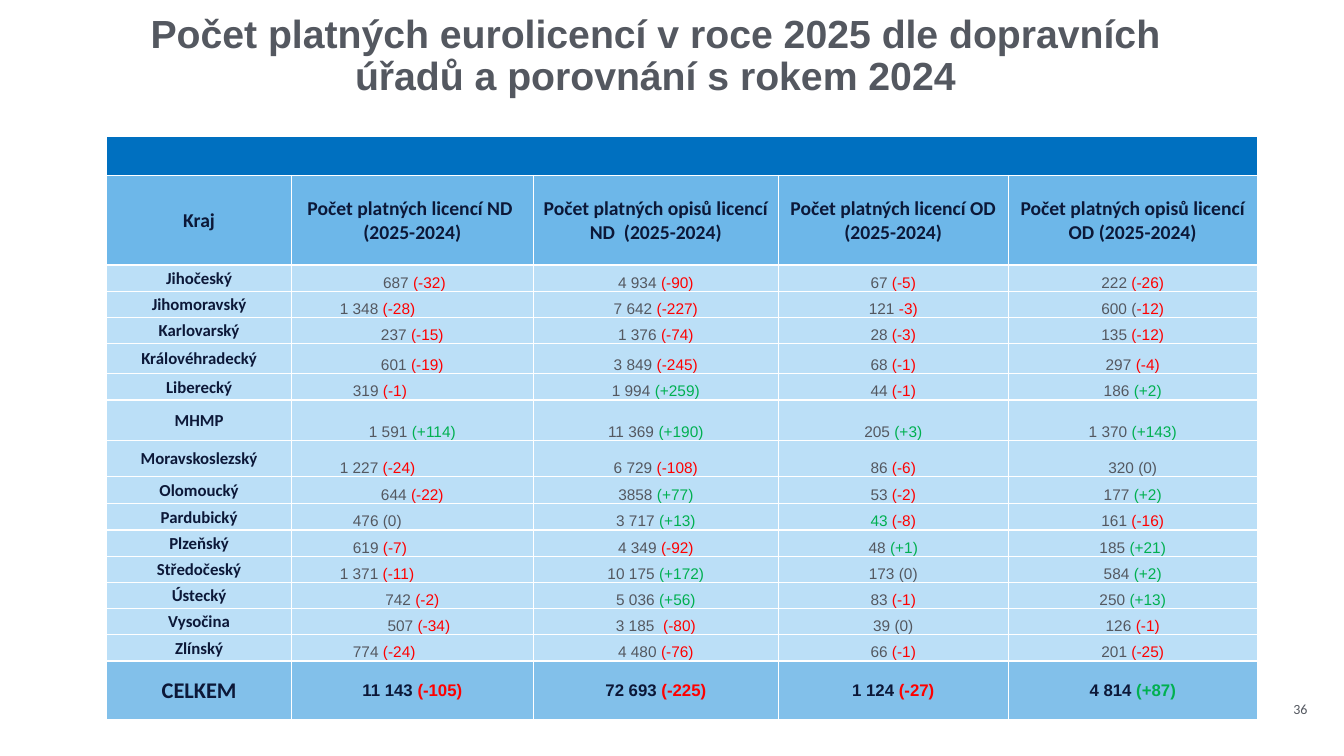
from lxml.etree import SubElement
from pptx import Presentation
from pptx.dml.color import RGBColor
from pptx.enum.text import MSO_ANCHOR as Anchor, MSO_AUTO_SIZE as AutoSize, PP_ALIGN as Align
from pptx.oxml.ns import qn
from pptx.util import Inches, Pt

GREY = RGBColor(0x54, 0x58, 0x60)
NAVY = RGBColor(0x0C, 0x18, 0x38)
RED = RGBColor(0xFF, 0x00, 0x00)
GREEN = RGBColor(0x00, 0xB0, 0x50)
BAND_BLUE = RGBColor(0x00, 0x70, 0xC0)
HEADER_BLUE = RGBColor(0x6D, 0xB7, 0xE9)
BODY_BLUE = RGBColor(0xBB, 0xDF, 0xF7)
TOTAL_BLUE = RGBColor(0x82, 0xC0, 0xEA)

TITLE = "Počet platných eurolicencí v roce 2025 dle dopravních úřadů a porovnání s rokem 2024"
HEADERS = [
    "Kraj",
    "Počet platných licencí ND \n(2025-2024)",
    "Počet platných opisů licencí ND  (2025-2024)",
    "Počet platných licencí OD\n(2025-2024)",
    "Počet platných opisů licencí OD (2025-2024)",
]
# A bar separates the count from its coloured change.
REGIONS = [
    ("Jihočeský", "687 |(-32)", "4 934 |(-90)", "67 |(-5)", "222 |(-26)"),
    ("Jihomoravský", "1 348 |(-28)", "7 642 |(-227)", "121 |-3)", "600 (|-12)"),
    ("Karlovarský", "237| (-15)", "1 376 |(-74)", "28 |(-3)", "135 |(-12)"),
    ("Královéhradecký", "601 |(-19)", "3 849 |(-245)", "68 |(-1)", "297 |(-4)"),
    ("Liberecký", "319 |(-1)", "1 994 |(+259)", "44 |(-1)", "186 |(+2)"),
    ("MHMP", "1 591 |(+114)", "11 369 |(+190)", "205 |(+3)", "1 370 |(+143)"),
    ("Moravskoslezský", "1 227 |(-24)", "6 729 |(-108)", "86 |(-6)", "320 (0)"),
    ("Olomoucký", "644 |(-22)", "3858 |(+77)", "53 |(-2)", "177 |(+2)"),
    ("Pardubický", "476 (0)", "3 717 |(+13)", "43 |(-8)", "161 |(-16)"),
    ("Plzeňský", "619 |(-7)", "4 349 |(-92)", "48 |(+1)", "185 |(+21)"),
    ("Středočeský", "1 371 |(-11)", "10 175 |(+172)", "173 (0)", "584 |(+2)"),
    ("Ústecký", "742 |(-2)", "5 036 |(+56)", "83 |(-1)", "250 |(+13)"),
    ("Vysočina", "507 |(-34)", "3 185  |(-80)", "39 (0)", "126 |(-1)"),
    ("Zlínský", "774 |(-24)", "4 480 |(-76)", "66 |(-1)", "201 |(-25)"),
]
TOTAL = ("CELKEM", "11 143 |(-105)", "72 693 |(-225)", "1 124 |(-27)", "4 814 |(+87)")

COLUMN_WIDTHS = [1.83, 2.4, 2.43, 2.28, 2.47]
BODY_HEIGHT = 0.26
TALL_ROWS = {"Královéhradecký": 0.3, "MHMP": 0.4, "Moravskoslezský": 0.36, "Olomoucký": 0.27}
# Left-aligned counts of the first value column, with their indents.
LEFT_INDENTS = {
    "Jihomoravský": 0.48, "Moravskoslezský": 0.48, "Středočeský": 0.48,
    "Liberecký": 0.61, "Pardubický": 0.61, "Plzeňský": 0.61, "Zlínský": 0.61,
}
CENTRED_INDENTS = {"Jihočeský": 0.05, "Vysočina": 0.14}
GREEN_COUNT = ("Pardubický", 3)


def add_run(paragraph, text, size, color, font="Calibri", bold=True):
    run = paragraph.add_run()
    run.text = text
    run.font.name, run.font.size, run.font.bold = font, Pt(size), bold
    run.font.color.rgb = color


def style_cell(cell, fill, anchor=Anchor.MIDDLE):
    """Set margins, white borders and fill; borders must precede the fill."""
    cell.margin_left = cell.margin_right = cell.margin_top = Inches(0.01)
    cell.margin_bottom = 0
    cell.vertical_anchor = anchor
    properties = cell._tc.get_or_add_tcPr()
    for side in ("a:lnL", "a:lnR", "a:lnT", "a:lnB"):
        line = SubElement(properties, qn(side), w=str(Pt(1)))
        solid = SubElement(line, qn("a:solidFill"))
        SubElement(solid, qn("a:srgbClr"), val="FFFFFF")
    cell.fill.solid()
    cell.fill.fore_color.rgb = fill


def write_label(cell, text, size):
    for index, line in enumerate(text.split("\n")):
        frame = cell.text_frame
        paragraph = frame.add_paragraph() if index else frame.paragraphs[0]
        paragraph.alignment = Align.CENTER
        add_run(paragraph, line, size, NAVY)


def write_value(cell, value, size, color, bold):
    count, _, change = value.partition("|")
    paragraph = cell.text_frame.paragraphs[0]
    paragraph.alignment = Align.CENTER
    add_run(paragraph, count, size, color, "Arial", bold)
    if change:
        add_run(paragraph, change, size, GREEN if "+" in change else RED, "Arial", bold)


def fill_region_row(cells, region):
    name = region[0]
    style_cell(cells[0], BODY_BLUE)
    write_label(cells[0], name, 12)
    for column in range(1, len(region)):
        style_cell(cells[column], BODY_BLUE, Anchor.BOTTOM)
        color = GREEN if (name, column) == GREEN_COUNT else GREY
        write_value(cells[column], region[column], 11, color, False)
    if name in LEFT_INDENTS:
        cells[1].text_frame.paragraphs[0].alignment = Align.LEFT
        cells[1].margin_left = Inches(LEFT_INDENTS[name])
    elif name in CENTRED_INDENTS:
        cells[1].margin_left = Inches(CENTRED_INDENTS[name])


def add_licence_table(slide, left, top):
    body_heights = [TALL_ROWS.get(region[0], BODY_HEIGHT) for region in REGIONS]
    heights = [0.39, 0.89, *body_heights, 0.58]
    frame = slide.shapes.add_table(
        len(heights), len(COLUMN_WIDTHS), Inches(left), Inches(top),
        Inches(sum(COLUMN_WIDTHS)), Inches(sum(heights)))
    table = frame.table
    for column, width in zip(table.columns, COLUMN_WIDTHS):
        column.width = Inches(width)
    for row, height in zip(table.rows, heights):
        row.height = Inches(height)
    band, header, *body, total = [list(row.cells) for row in table.rows]

    for cell in band:
        style_cell(cell, BAND_BLUE)
    band[0].merge(band[-1])
    for cell, text in zip(header, HEADERS):
        style_cell(cell, HEADER_BLUE)
        write_label(cell, text, 14)
    for cells, region in zip(body, REGIONS):
        fill_region_row(cells, region)
    for cell in total:
        style_cell(cell, TOTAL_BLUE)
    write_label(total[0], TOTAL[0], 16)
    for cell, value in zip(total[1:], TOTAL[1:]):
        write_value(cell, value, 12, NAVY, True)


def set_title(slide, left, top, width, height):
    title = slide.shapes.title
    title.left, title.top = Inches(left), Inches(top)
    title.width, title.height = Inches(width), Inches(height)
    frame = title.text_frame
    frame.margin_left = frame.margin_right = frame.margin_top = frame.margin_bottom = 0
    frame.auto_size = AutoSize.NONE
    frame.word_wrap = True
    frame.vertical_anchor = Anchor.MIDDLE
    paragraph = frame.paragraphs[0]
    paragraph.alignment = Align.CENTER
    paragraph.line_spacing = 0.9
    add_run(paragraph, TITLE, 28, GREY, "Arial")


def add_page_number(slide, left, top, width, height):
    box = slide.shapes.add_textbox(Inches(left), Inches(top), Inches(width), Inches(height))
    box.text_frame.word_wrap = False
    box.text_frame.auto_size = AutoSize.SHAPE_TO_FIT_TEXT
    add_run(box.text_frame.paragraphs[0], "36", 10, GREY, bold=False)


def main():
    presentation = Presentation()
    presentation.slide_width, presentation.slide_height = Inches(13.33), Inches(7.5)
    slide = presentation.slides.add_slide(presentation.slide_layouts[5])
    set_title(slide, 1.19, 0.17, 10.62, 0.79)
    add_licence_table(slide, 1.06, 1.35)
    add_page_number(slide, 12.73, 6.9, 0.36, 0.27)
    presentation.save("out.pptx")


if __name__ == "__main__":
    main()
